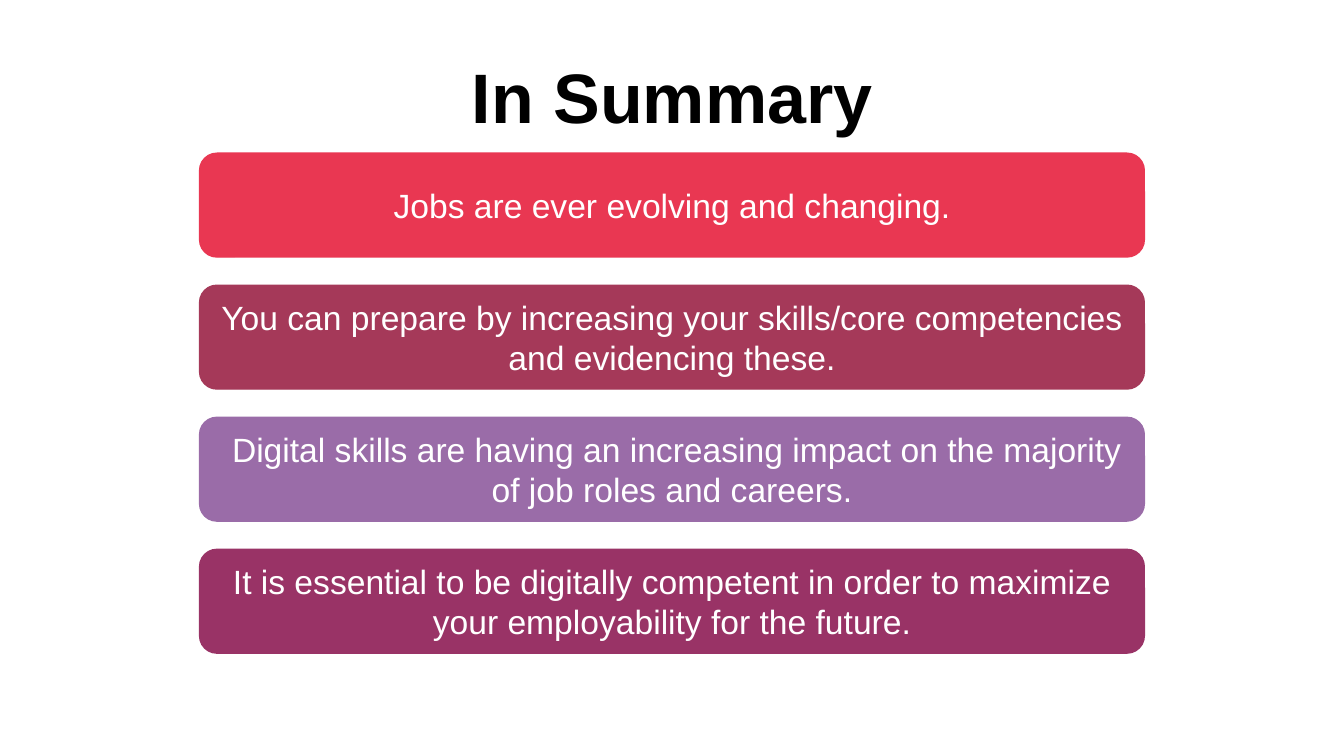
"""Build the "In Summary" slide: a title above four stacked message bars."""
from dataclasses import dataclass

from pptx import Presentation
from pptx.dml.color import RGBColor
from pptx.enum.shapes import MSO_SHAPE
from pptx.enum.text import MSO_ANCHOR, PP_ALIGN
from pptx.util import Inches, Pt

HEADING = "In Summary"
MESSAGES = [
    ("Jobs are ever evolving and changing.", "E93752"),
    ("You can prepare by increasing your skills/core competencies and evidencing these.", "A53959"),
    (" Digital skills are having an increasing impact on the majority of job roles and careers.", "9A6CA8"),
    ("It is essential to be digitally competent in order to maximize your employability for the future.", "993366"),
]

BAR_LEFT, BAR_TOP = 1.98, 1.52
BAR_WIDTH, BAR_HEIGHT = 9.37, 1.03
BAR_STEP = 1.31


@dataclass(frozen=True)
class Theme:
    font: str = "Arial"
    heading_size: int = 50
    message_size: int = 24
    heading_color: str = "000000"
    message_color: str = "FFFFFF"


THEME = Theme()


def write(shape, text, size, color, anchor, bold=False):
    frame = shape.text_frame
    frame.word_wrap = True
    frame.vertical_anchor = anchor
    paragraph = frame.paragraphs[0]
    paragraph.text = text
    paragraph.alignment = PP_ALIGN.CENTER
    paragraph.font.name = THEME.font
    paragraph.font.size = Pt(size)
    paragraph.font.bold = bold
    paragraph.font.color.rgb = RGBColor.from_string(color)
    return paragraph


def add_heading(slide):
    heading = slide.shapes.add_textbox(Inches(0.92), Inches(0.58), Inches(11.5), Inches(1.45))
    paragraph = write(heading, HEADING, THEME.heading_size, THEME.heading_color, MSO_ANCHOR.TOP, bold=True)
    paragraph.line_spacing = 0.9


def add_message(slide, index, message, color):
    bar = slide.shapes.add_shape(
        MSO_SHAPE.ROUNDED_RECTANGLE,
        Inches(BAR_LEFT), Inches(BAR_TOP + index * BAR_STEP),
        Inches(BAR_WIDTH), Inches(BAR_HEIGHT),
    )
    bar.shadow.inherit = False
    bar.fill.solid()
    bar.fill.fore_color.rgb = RGBColor.from_string(color)
    bar.line.color.rgb = RGBColor.from_string(color)
    bar.line.width = Pt(1)
    write(bar, message, THEME.message_size, THEME.message_color, MSO_ANCHOR.MIDDLE)


def main():
    deck = Presentation()
    deck.slide_width, deck.slide_height = Inches(13.33), Inches(7.5)
    slide = deck.slides.add_slide(deck.slide_layouts[6])
    add_heading(slide)
    for index, (message, color) in enumerate(MESSAGES):
        add_message(slide, index, message, color)
    deck.save("out.pptx")


if __name__ == "__main__":
    main()
